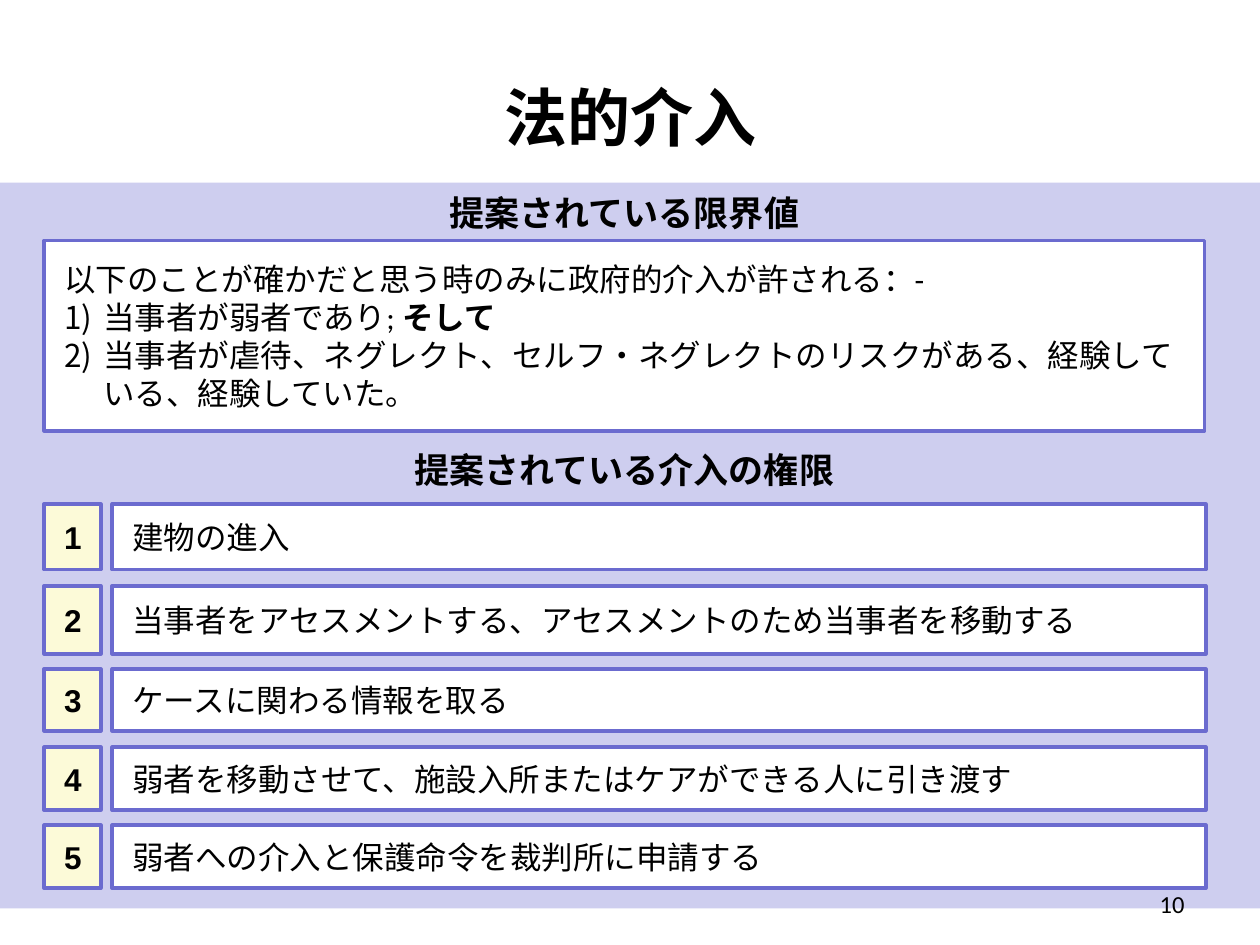
from dataclasses import dataclass

from lxml import etree
from pptx import Presentation
from pptx.dml.color import RGBColor
from pptx.enum.shapes import MSO_SHAPE
from pptx.enum.text import MSO_ANCHOR, PP_ALIGN
from pptx.oxml.ns import qn
from pptx.util import Pt

RECTANGLE = MSO_SHAPE.RECTANGLE
MIDDLE, TOP = MSO_ANCHOR.MIDDLE, MSO_ANCHOR.TOP
LEFT, CENTER, RIGHT = PP_ALIGN.LEFT, PP_ALIGN.CENTER, PP_ALIGN.RIGHT

TITLE = "法的介入"
LIMITS_HEADING = "提案されている限界値"
LIMITS_INTRO = "以下のことが確かだと思う時のみに政府的介入が許される：-"
LIMITS = [
    [("当事者が弱者であり; ", False), ("そして", True)],
    [("当事者が虐待、ネグレクト、セルフ・ネグレクトのリスクがある、"
      "経験している、経験していた。", False)],
]
POWERS_HEADING = "提案されている介入の権限"
POWERS = [
    ("建物の進入", 400, 52),
    ("当事者をアセスメントする、アセスメントのため当事者を移動する", 465, 54),
    ("ケースに関わる情報を取る", 531, 49),
    ("弱者を移動させて、施設入所またはケアができる人に引き渡す", 593, 50),
    ("弱者への介入と保護命令を裁判所に申請する", 655, 50),
]
PAGE_NUMBER = "10"

EMU_PER_PX = 9144
SLIDE_W, SLIDE_H = 1000, 750
EDGE, NUMBER_W = 35, 45
POWER_X, POWER_W = 89, 868
HEADING_X, HEADING_W, HEADING_H = 225, 541, 44
BOX_INSET, TEXT_INSETS = (16, 16), (10, 5)
INDENT = 31


@dataclass(frozen=True)
class Theme:
    ink: str = "000000"
    panel: str = "CECEEF"
    card: str = "FFFFFF"
    badge: str = "FCFAD8"
    border: str = "6B6BCF"
    body_font: str = "Calibri"
    number_font: str = "Arial"
    title_size: int = 36
    heading_size: int = 20
    body_size: int = 18
    page_size: int = 14
    border_width: int = 2


THEME = Theme()


def px(length):
    return length * EMU_PER_PX


def place(*box):
    return [px(length) for length in box]


def write(frame, text, *, size=THEME.body_size, font=THEME.body_font, bold=False,
          align=LEFT, anchor=MIDDLE, insets=BOX_INSET):
    paragraphs = [[(text, bold)]] if isinstance(text, str) else text
    frame.word_wrap = True
    frame.vertical_anchor = anchor
    frame.margin_left = frame.margin_right = px(insets[0])
    frame.margin_top = frame.margin_bottom = px(insets[1])
    for index, runs in enumerate(paragraphs):
        paragraph = frame.add_paragraph() if index else frame.paragraphs[0]
        paragraph.alignment = align
        for words, is_bold in runs:
            run = paragraph.add_run()
            run.text = words
            run.font.name = font
            run.font.size = Pt(size)
            run.font.bold = is_bold
            run.font.color.rgb = RGBColor.from_string(THEME.ink)


def add_box(slide, box, fill, border=None):
    shape = slide.shapes.add_shape(RECTANGLE, *place(*box))
    shape.shadow.inherit = False
    shape.fill.solid()
    shape.fill.fore_color.rgb = RGBColor.from_string(fill)
    if border:
        shape.line.color.rgb = RGBColor.from_string(border)
        shape.line.width = Pt(THEME.border_width)
    else:
        shape.line.fill.background()
    return shape.text_frame


def add_label(slide, box, text, **style):
    frame = slide.shapes.add_textbox(*place(*box)).text_frame
    write(frame, text, anchor=TOP, insets=TEXT_INSETS, **style)


def number(paragraph):
    properties = paragraph._p.get_or_add_pPr()
    properties.set("marL", str(px(INDENT)))
    properties.set("indent", str(-px(INDENT)))
    etree.SubElement(properties, qn("a:buAutoNum"), type="arabicParenR")


def build():
    deck = Presentation()
    deck.slide_width, deck.slide_height = place(SLIDE_W, SLIDE_H)
    slide = deck.slides.add_slide(deck.slide_layouts[5])

    title = slide.shapes.title
    title.left, title.top, title.width, title.height = place(50, 30, 900, 125)
    write(title.text_frame, TITLE, size=THEME.title_size, bold=True,
          align=CENTER, insets=TEXT_INSETS)

    add_box(slide, (0, 145, SLIDE_W, 576), THEME.panel)

    for rank, (power, top, height) in enumerate(POWERS, 1):
        badge = add_box(slide, (EDGE, top, NUMBER_W, height), THEME.badge, THEME.border)
        write(badge, str(rank), font=THEME.number_font, bold=True)
        card = add_box(slide, (POWER_X, top, POWER_W, height), THEME.card, THEME.border)
        write(card, power)

    limits = add_box(slide, (EDGE, 191, 921, 151), THEME.card, THEME.border)
    write(limits, [[(LIMITS_INTRO, False)], *LIMITS])
    for paragraph in limits.paragraphs[1:]:
        number(paragraph)

    for heading, top in ((LIMITS_HEADING, 147), (POWERS_HEADING, 351)):
        add_label(slide, (HEADING_X, top, HEADING_W, HEADING_H), heading,
                  size=THEME.heading_size, bold=True, align=CENTER)

    add_label(slide, (717, 701, 233, 52), PAGE_NUMBER, size=THEME.page_size, align=RIGHT)
    deck.save("out.pptx")


if __name__ == "__main__":
    build()
